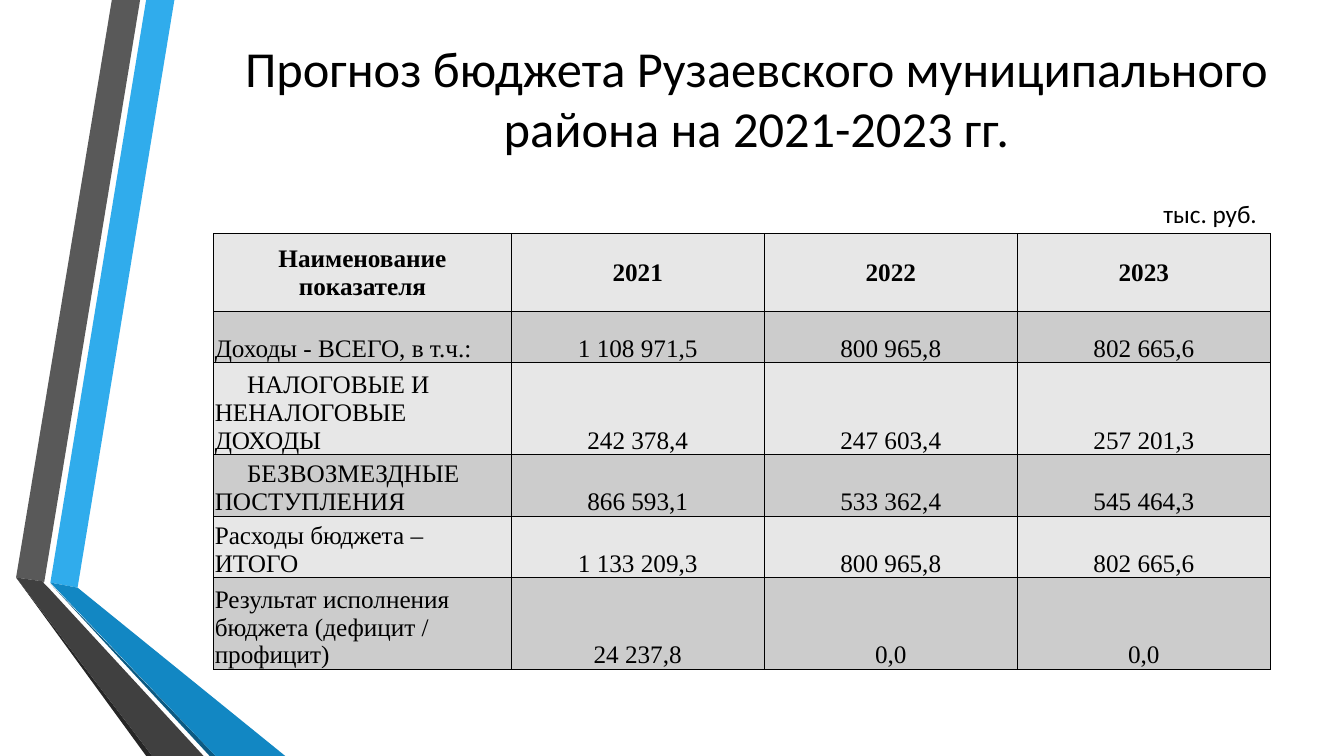
from lxml.etree import SubElement
from pptx import Presentation
from pptx.dml.color import RGBColor
from pptx.enum.text import MSO_ANCHOR, PP_ALIGN
from pptx.oxml.ns import qn
from pptx.util import Pt

PX = 9144  # EMU in one px, 100 px to the inch


def color(code):
    return RGBColor.from_string(code)


class Deck:
    ink = "000000"
    sans = "Calibri"
    serif = "Times New Roman"
    bands = ("E7E7E7", "CCCCCC")

    def __init__(self, wide, high):
        self.prs = Presentation()
        self.prs.slide_width = wide * PX
        self.prs.slide_height = high * PX
        self.slide = self.prs.slides.add_slide(self.prs.slide_layouts[6])

    def ribbon(self, fill, points):
        """Filled outline without a line."""
        build = self.slide.shapes.build_freeform(*points[0], scale=PX)
        build.add_line_segments(points[1:], close=True)
        shape = build.convert_to_shape()
        shape.shadow.inherit = False
        shape.fill.solid()
        shape.fill.fore_color.rgb = color(fill)
        shape.line.fill.background()

    def words(self, para, text, size, font, bold=False):
        """One run per line of text."""
        for i, line in enumerate(text.split("\n")):
            if i:
                para.add_line_break()
            run = para.add_run()
            run.text = line
            run.font.size = Pt(size)
            run.font.name = font
            run.font.bold = bold
            run.font.color.rgb = color(self.ink)

    def label(self, box, text, size, align=PP_ALIGN.LEFT, wrap=True):
        shape = self.slide.shapes.add_textbox(*(n * PX for n in box))
        frame = shape.text_frame
        frame.word_wrap = wrap
        frame.vertical_anchor = MSO_ANCHOR.MIDDLE if wrap else MSO_ANCHOR.TOP
        para = frame.paragraphs[0]
        para.alignment = align
        self.words(para, text, size, self.sans)

    def border(self, cell):
        props = cell._tc.get_or_add_tcPr()
        for side in ("lnL", "lnR", "lnT", "lnB"):
            line = SubElement(props, qn("a:" + side), w=str(Pt(1)))
            fill = SubElement(line, qn("a:solidFill"))
            SubElement(fill, qn("a:srgbClr"), val=self.ink)

    def cell(self, cell, text, head, first, band, indent):
        self.border(cell)
        cell.fill.solid()
        cell.fill.fore_color.rgb = color(band)
        cell.margin_left = cell.margin_right = cell.margin_top = PX
        cell.margin_bottom = 0
        cell.vertical_anchor = MSO_ANCHOR.MIDDLE if head else MSO_ANCHOR.BOTTOM
        para = cell.text_frame.paragraphs[0]
        para.alignment = PP_ALIGN.CENTER if head or not first else PP_ALIGN.LEFT
        if indent:
            para._p.get_or_add_pPr().set("indent", str(indent * PX))
        self.words(para, text, 18, self.serif, head)

    def table(self, left, top, cols, rows, data, nested):
        box = (left, top, sum(cols), sum(rows))
        frame = self.slide.shapes.add_table(
            len(rows), len(cols), *(n * PX for n in box))
        table = frame.table
        table.first_row = table.horz_banding = False
        for col, wide in zip(table.columns, cols):
            col.width = wide * PX
        for r, (row, high) in enumerate(zip(table.rows, rows)):
            row.height = high * PX
            for c, text in enumerate(data[r]):
                indent = 32 if c == 0 and r in nested else 0
                self.cell(table.cell(r, c), text, r == 0, c == 0,
                          self.bands[r % 2], indent)


def main():
    deck = Deck(1333, 750)

    # Folded ribbons on the left
    deck.ribbon("30ACEC", [(50, 578), (77, 583), (173, 0), (145, 0)])
    deck.ribbon("595959", [(139, 0), (111, 0), (16, 573), (44, 577)])
    deck.ribbon("262626", [(16, 573), (145, 750), (151, 750)])
    deck.ribbon("0C5A82", [(50, 579), (208, 750), (214, 750)])
    deck.ribbon("1287C3", [(50, 578), (214, 750), (283, 750), (77, 583)])
    deck.ribbon("404040", [(202, 750), (48, 583), (43, 578), (44, 577),
                           (16, 573), (151, 750)])

    # Title
    deck.label((180, 30, 1141, 133),
               "Прогноз бюджета Рузаевского муниципального района "
               "на 2021-2023 гг.", 36, PP_ALIGN.CENTER)

    # Budget table
    data = [
        ("Наименование\nпоказателя", "2021", "2022", "2023"),
        ("Доходы - ВСЕГО, в т.ч.:", "1 108 971,5", "800 965,8", "802 665,6"),
        ("НАЛОГОВЫЕ И НЕНАЛОГОВЫЕ ДОХОДЫ",
         "242 378,4", "247 603,4", "257 201,3"),
        ("БЕЗВОЗМЕЗДНЫЕ ПОСТУПЛЕНИЯ", "866 593,1", "533 362,4", "545 464,3"),
        ("Расходы бюджета – ИТОГО", "1 133 209,3", "800 965,8", "802 665,6"),
        ("Результат исполнения бюджета (дефицит / профицит)",
         "24 237,8", "0,0", "0,0"),
    ]
    deck.table(212, 232, [295] + [251] * 3, [77, 51, 84, 56, 56, 84],
               data, nested=(2, 3))

    # Unit of measure
    deck.label((1144, 192, 116, 40), "тыс. руб.", 18, wrap=False)

    deck.prs.save("out.pptx")


if __name__ == "__main__":
    main()
